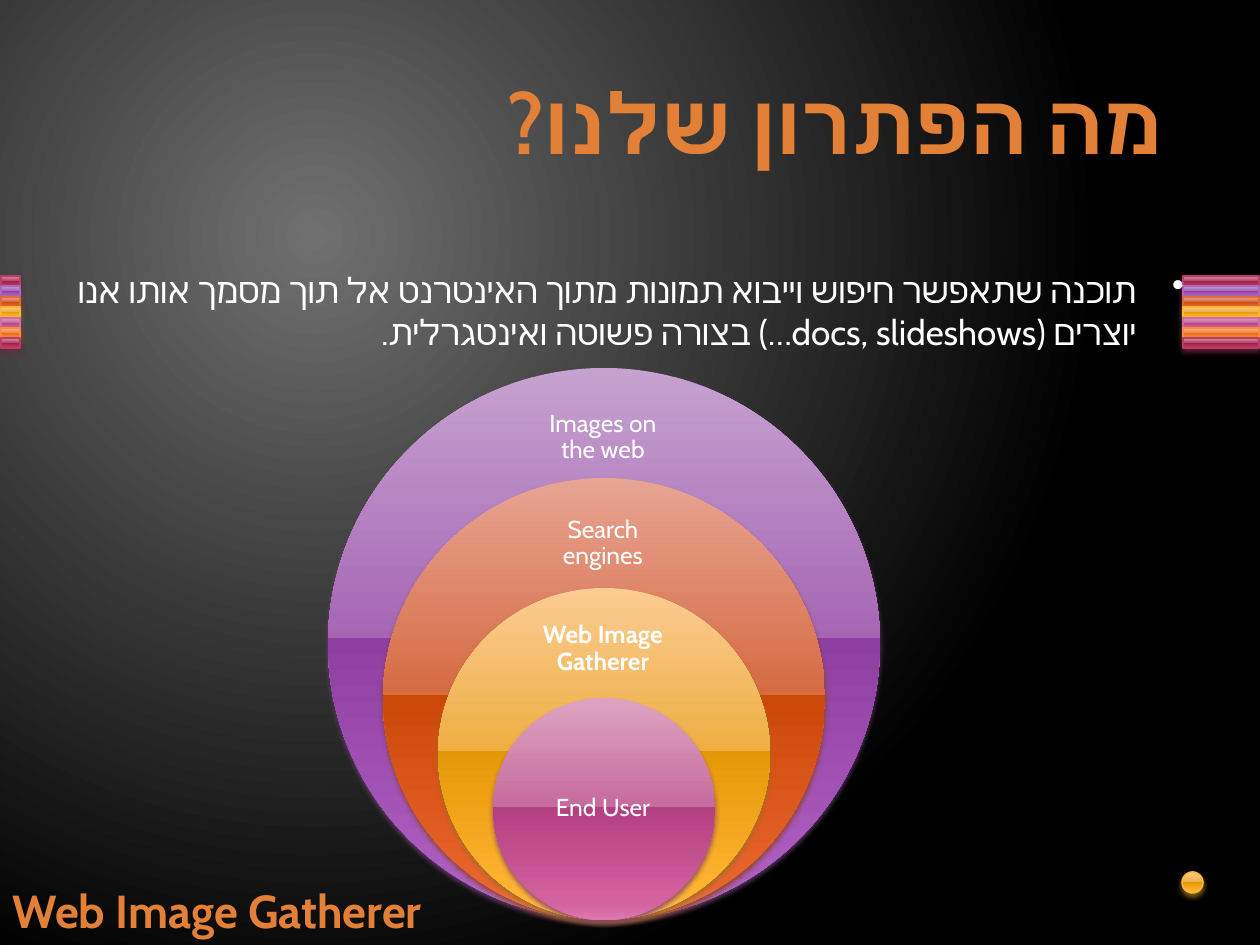
"""Build the Hebrew solution slide with its nested circles of image sources."""
from dataclasses import dataclass
from typing import Optional

from lxml.etree import SubElement
from pptx import Presentation
from pptx.dml.color import RGBColor
from pptx.enum.shapes import MSO_SHAPE as Preset
from pptx.enum.text import MSO_ANCHOR as Anchor, MSO_AUTO_SIZE as AutoSize, PP_ALIGN as Align
from pptx.oxml.ns import qn
from pptx.util import Pt

SCALE = 914400 / 126
FONT = "Cabin"
COLORS = {"white": "FFFFFF", "glow": "707070", "black": "000000",
          "heading": "E38037", "heading_light": "FA8D3D"}
GLOSS_STOPS = (0, 49, 49, 92, 100)
PRODUCT = "Web Image Gatherer"


@dataclass(frozen=True)
class Gloss:
    shades: tuple[str, ...]
    edge: str
    shadow: str


@dataclass(frozen=True)
class Box:
    left: int
    top: int
    width: int
    height: int

    def emu(self) -> tuple[int, ...]:
        return tuple(px(n) for n in (self.left, self.top, self.width, self.height))


@dataclass(frozen=True)
class Ring:
    gloss: str
    label: str
    label_box: Box
    bold: bool = False


GLOSSES = {
    "orange": Gloss(("FBB494", "F08745", "E5670B", "FF8736", "FF9961"), "FA8D3D", "9A5726"),
    "pink": Gloss(("DDA4C1", "C66B9D", "B34181", "D361A0", "DC79AE"), "CF6DA4", "804365"),
    "amber": Gloss(("FBCC93", "EFAE43", "E59807", "FFB432", "FFBE5F"), "F9B639", "9A7023"),
    "rust": Gloss(("E7A493", "D66B42", "CC4809", "E9642C", "F07B55"), "DE6C36", "894321"),
    "purple": Gloss(("C6A2D0", "A666B4", "8F3EA1", "AD5DBF", "BA76CA"), "AC66BB", "6A3F73"),
    "plum": Gloss(("CE94A2", "B34869", "A61749", "C13764", "CA5D7C"), "B83D68", "722640"),
}
STRIPES = ("plum", "purple", "rust", "amber", "pink", "orange", "plum")
RINGS = (
    Ring("purple", "Images on the web", Box(526, 396, 154, 83)),
    Ring("rust", "Search engines", Box(526, 504, 154, 79)),
    Ring("amber", PRODUCT, Box(526, 612, 154, 74), bold=True),
    Ring("pink", "End User", Box(525, 753, 156, 111)),
)


def px(length: float) -> int:
    return round(length * SCALE)


def set_gradient(owner, stops, angle: int = 90, focus: Optional[dict] = None) -> None:
    """Replace the stops and direction of the gradient fill found inside owner."""
    gradient = next(owner.iter(qn("a:gradFill")))
    for child in list(gradient):
        gradient.remove(child)
    stop_list = SubElement(gradient, qn("a:gsLst"))
    for position, shade in stops:
        stop = SubElement(stop_list, qn("a:gs"), pos=str(position * 1000))
        SubElement(stop, qn("a:srgbClr"), val=shade)
    if focus:
        circle = SubElement(gradient, qn("a:path"), {"path": "circle"})
        SubElement(circle, qn("a:fillToRect"), focus)
    else:
        SubElement(gradient, qn("a:lin"), ang=str(angle * 60000), scaled="0")


def add_glossy(slide, preset, box: Box, gloss: Gloss, outlined: bool = True) -> None:
    """Draw a glossy shape with a soft shadow below it."""
    glossy = slide.shapes.add_shape(preset, *box.emu())
    glossy.shadow.inherit = False
    glossy.fill.gradient()
    set_gradient(glossy.element, zip(GLOSS_STOPS, gloss.shades))
    if outlined:
        glossy.line.color.rgb = RGBColor.from_string(gloss.edge)
        glossy.line.width = Pt(0.9)
    else:
        glossy.line.fill.background()
    effects = next(glossy.element.iter(qn("a:effectLst")))
    shadow = SubElement(effects, qn("a:outerShdw"), blurRad=str(Pt(3.1)), dist=str(Pt(2)),
                        dir="5400000", rotWithShape="0")
    shade = SubElement(shadow, qn("a:srgbClr"), val=gloss.shadow)
    SubElement(shade, qn("a:alpha"), val="83000")


def write(holder, text: str, size: float, align, color: str = "white",
          bold: bool = False, anchor=Anchor.MIDDLE):
    """Fill a text holder with one formatted paragraph and return it."""
    frame = holder.text_frame
    frame.word_wrap = True
    frame.auto_size = AutoSize.NONE
    frame.vertical_anchor = anchor
    paragraph = frame.paragraphs[0]
    paragraph.text = text
    paragraph.alignment = align
    font = paragraph.font
    font.name, font.size, font.bold = FONT, Pt(size), bold
    font.color.rgb = RGBColor.from_string(COLORS[color])
    defaults = next(holder.element.iter(qn("a:defRPr")))
    SubElement(defaults, qn("a:cs"), typeface=FONT)
    return paragraph


def write_heading(holder, text: str, size: float, align):
    """Write bold text in the orange heading gradient."""
    paragraph = write(holder, text, size, align, "heading", True)
    paragraph.runs[0].font.fill.gradient()
    set_gradient(holder.element, ((40, COLORS["heading"]), (45, COLORS["heading_light"])), 270)
    return paragraph


def set_rtl(paragraph):
    """Set right-to-left reading order and return the paragraph properties."""
    properties = paragraph._p.get_or_add_pPr()
    properties.set("rtl", "1")
    return properties


def add_textbox(slide, box: Box):
    return slide.shapes.add_textbox(*box.emu())


def add_stripes(slide, left: int, width: int) -> None:
    for row, name in enumerate(STRIPES):
        add_glossy(slide, Preset.RECTANGLE, Box(left, 276 + round(10.4 * row), width, 10),
                   GLOSSES[name])


def add_ring(slide, ring: Ring, level: int) -> None:
    """Draw a circle that shares its lowest point with the others, and its label."""
    diameter = 552 - 110 * level
    add_glossy(slide, Preset.OVAL, Box(604 - diameter // 2, 920 - diameter, diameter, diameter),
               GLOSSES[ring.gloss], outlined=False)
    label = add_textbox(slide, ring.label_box)
    frame = label.text_frame
    frame.margin_left = frame.margin_right = frame.margin_top = frame.margin_bottom = px(14)
    paragraph = write(label, ring.label, 14, Align.CENTER, bold=ring.bold)
    paragraph.line_spacing = 0.9
    paragraph.space_after = Pt(5)


def add_summary(slide) -> None:
    summary = add_textbox(slide, Box(0, 262, 1197, 462))
    paragraph = write(
        summary,
        "תוכנה שתאפשר חיפוש וייבוא תמונות מתוך האינטרנט אל תוך מסמך אותו אנו יוצרים "
        "(docs, slideshows…) בצורה פשוטה ואינטגרלית.",
        20, Align.RIGHT, anchor=Anchor.TOP)
    paragraph.space_before = Pt(4)
    properties = set_rtl(paragraph)
    properties.set("marL", str(px(48)))
    properties.set("indent", str(px(-48)))
    bullet = properties.makeelement(qn("a:buChar"), {"char": "•"})
    properties.find(qn("a:defRPr")).addprevious(bullet)


def main() -> None:
    deck = Presentation()
    deck.slide_width, deck.slide_height = px(1260), px(945)
    slide = deck.slides.add_slide(deck.slide_layouts[5])
    slide.background.fill.gradient()
    set_gradient(slide.element, ((0, COLORS["glow"]), (100, COLORS["black"])),
                 focus={"l": "50000", "t": "50000", "r": "100000", "b": "100000"})

    add_stripes(slide, 1, 19)
    add_stripes(slide, 1183, 76)
    add_glossy(slide, Preset.OVAL, Box(1182, 872, 21, 21), GLOSSES["amber"])

    title = slide.shapes.title
    title.left, title.top, title.width, title.height = Box(42, 42, 1134, 157).emu()
    set_rtl(write_heading(title, "מה הפתרון שלנו?", 48, Align.RIGHT))
    add_summary(slide)
    for level, ring in enumerate(RINGS):
        add_ring(slide, ring, level)
    product = add_textbox(slide, Box(0, 886, 473, 59))
    write_heading(product, PRODUCT, 26.4, Align.LEFT).line_spacing = 0.8
    deck.save("out.pptx")


if __name__ == "__main__":
    main()
